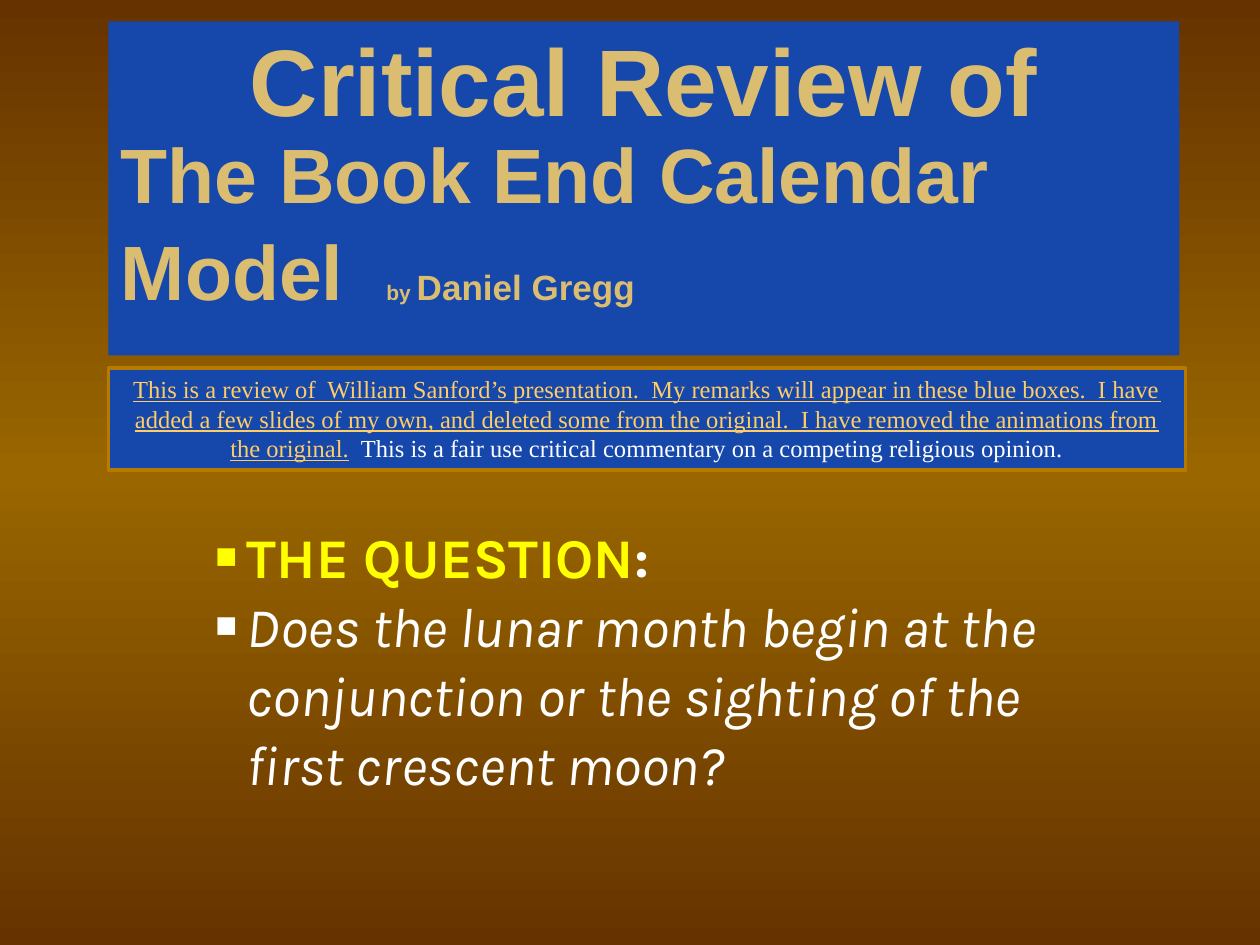
from copy import deepcopy
from dataclasses import dataclass

from pptx import Presentation
from pptx.dml.color import RGBColor
from pptx.enum.shapes import MSO_SHAPE
from pptx.enum.text import MSO_ANCHOR, MSO_AUTO_SIZE, PP_ALIGN
from pptx.oxml.ns import qn
from pptx.util import Inches, Pt

BROWN = RGBColor(0x66, 0x33, 0x00)
OCHRE = RGBColor(0x99, 0x66, 0x00)
BLUE = RGBColor(0x16, 0x47, 0xAA)
SAND = RGBColor(0xDB, 0xBD, 0x71)
GOLD = RGBColor(0xFF, 0xCC, 0x66)
BORDER = RGBColor(0xB7, 0x7A, 0x00)
YELLOW = RGBColor(0xFF, 0xFF, 0x00)
WHITE = RGBColor(0xFF, 0xFF, 0xFF)

LEFT, WIDTH = 0.86, 8.5
BULLET_INDENT = Inches(0.25)


@dataclass
class Span:
    text: str
    size: float
    font: str
    color: RGBColor
    bold: bool = False
    italic: bool = False
    underline: bool = False


def place(shape, left: float, top: float, width: float, height: float) -> None:
    shape.left, shape.top = Inches(left), Inches(top)
    shape.width, shape.height = Inches(width), Inches(height)


def write(para, spans: list[Span], align: PP_ALIGN) -> None:
    para.alignment = align
    for span in spans:
        run = para.add_run()
        run.text = span.text
        font = run.font
        font.size, font.name = Pt(span.size), span.font
        font.bold, font.italic, font.underline = span.bold, span.italic, span.underline
        font.color.rgb = span.color


def prepare_frame(shape, anchor: MSO_ANCHOR):
    frame = shape.text_frame
    frame.word_wrap = True
    frame.auto_size = MSO_AUTO_SIZE.NONE
    frame.vertical_anchor = anchor
    return frame


def fill_blue(shape) -> None:
    shape.fill.solid()
    shape.fill.fore_color.rgb = BLUE


def add_blue_box(page, top: float, width: float, height: float,
                 anchor: MSO_ANCHOR, spans: list[Span]):
    box = page.shapes.add_shape(MSO_SHAPE.RECTANGLE, Inches(LEFT), Inches(top),
                                Inches(width), Inches(height))
    box.shadow.inherit = False
    fill_blue(box)
    box.line.fill.background()
    write(prepare_frame(box, anchor).paragraphs[0], spans, PP_ALIGN.CENTER)
    return box


def add_square_bullet(para) -> None:
    properties = para._p.get_or_add_pPr()
    properties.set("marL", str(BULLET_INDENT))
    properties.set("indent", str(-BULLET_INDENT))
    for tag, name, value in (("a:buSzPct", "val", "65000"), ("a:buChar", "char", "■")):
        properties.append(properties.makeelement(qn(tag), {name: value}))


def paint_background(page) -> None:
    fill = page.background.fill
    fill.gradient()
    fill.gradient_angle = 90
    first, last = fill.gradient_stops
    first.color.rgb = last.color.rgb = BROWN
    first.position, last.position = 0, 1
    stops = page.background._cSld.find(".//" + qn("a:gsLst"))
    stops.insert(1, deepcopy(stops[0]))
    middle = fill.gradient_stops[1]
    middle.color.rgb, middle.position = OCHRE, 0.5


def main() -> None:
    deck = Presentation()
    deck.slide_width, deck.slide_height = Inches(10), Inches(7.5)
    page = deck.slides.add_slide(deck.slide_layouts[0])
    paint_background(page)

    title = page.shapes.title
    place(title, LEFT, 0.92, WIDTH, 1.9)
    fill_blue(title)
    heading = prepare_frame(title, MSO_ANCHOR.TOP).paragraphs[0]
    heading.line_spacing = 1.05
    write(heading, [
        Span("The Book End Calendar Model  ", 44, "Arial", SAND, bold=True),
        Span("by ", 12, "Arial", SAND, bold=True),
        Span("Daniel Gregg", 20, "Arial", SAND, bold=True),
    ], PP_ALIGN.LEFT)

    question = page.placeholders[1]
    place(question, 1.61, 4.08, 7, 2.5)
    frame = prepare_frame(question, MSO_ANCHOR.TOP)
    lines = [
        [Span("THE QUESTION", 32, "Karla", YELLOW, bold=True),
         Span(":", 32, "Karla", WHITE, bold=True)],
        [Span("Does the lunar month begin at the conjunction or the sighting "
              "of the first crescent moon?", 32, "Karla", WHITE, italic=True)],
    ]
    for index, spans in enumerate(lines):
        para = frame.add_paragraph() if index else frame.paragraphs[0]
        para.space_before = Pt(0)
        para.line_spacing = 1.03
        write(para, spans, PP_ALIGN.LEFT)
        add_square_bullet(para)

    add_blue_box(page, 0.17, WIDTH, 0.95, MSO_ANCHOR.BOTTOM,
                 [Span("Critical Review of", 54, "Arial", SAND, bold=True)])

    remark = add_blue_box(page, 2.92, 8.55, 0.81, MSO_ANCHOR.TOP, [
        Span("This is a review of  William Sanford’s presentation.  My remarks will "
             "appear in these blue boxes.  I have added a few slides of my own, and "
             "deleted some from the original.  I have removed the animations from "
             "the original.", 14, "Times New Roman", GOLD, underline=True),
        Span("  This is a fair use critical commentary on a competing religious "
             "opinion.", 14, "Times New Roman", WHITE),
    ])
    remark.line.color.rgb = BORDER
    remark.line.width = Pt(2)

    deck.save("out.pptx")


if __name__ == "__main__":
    main()
